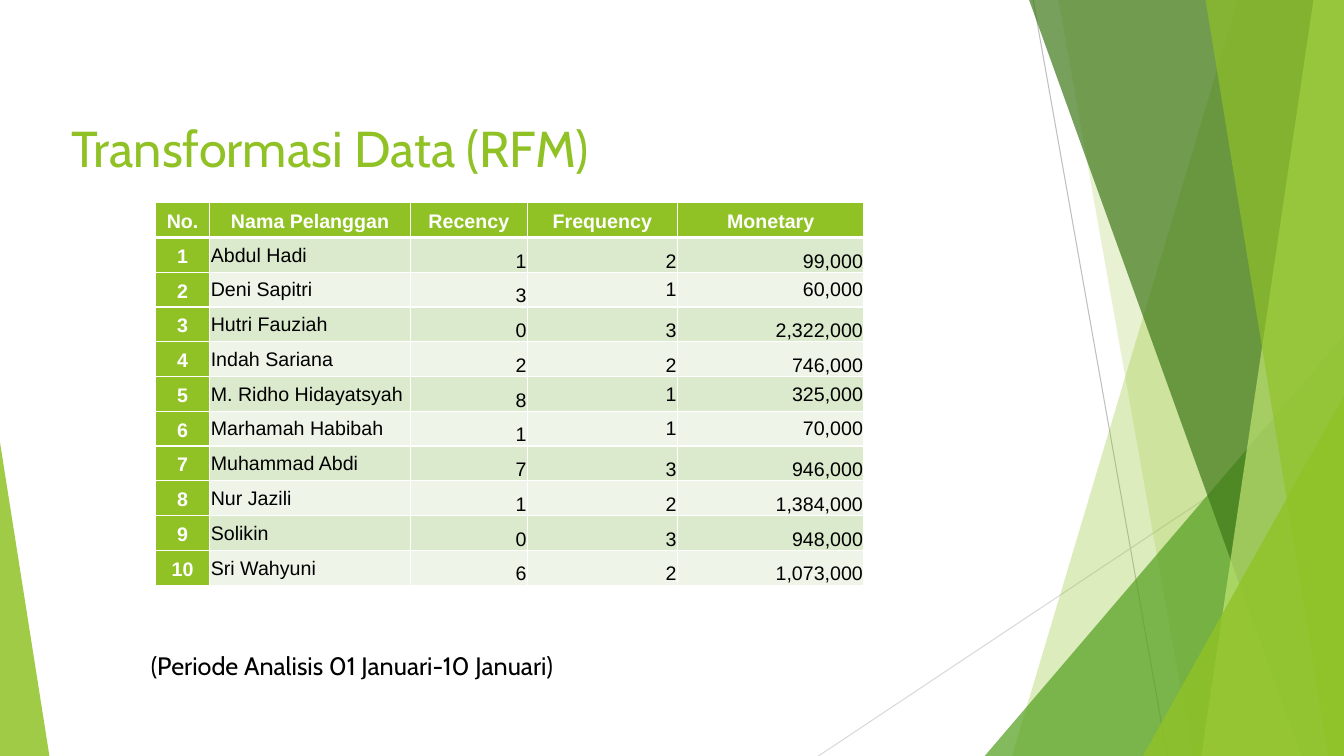
from lxml.etree import SubElement
from pptx import Presentation
from pptx.dml.color import RGBColor
from pptx.enum.shapes import MSO_CONNECTOR, MSO_SHAPE
from pptx.enum.text import MSO_ANCHOR, PP_ALIGN
from pptx.oxml.ns import qn
from pptx.util import Pt

GREEN = "90C226"
WHITE = "FFFFFF"
BLACK = "000000"
HEADINGS = ["No.", "Nama Pelanggan", "Recency", "Frequency", "Monetary"]
COLUMN_WIDTHS = [38.9, 143.3, 83.5, 107.3, 133.2]
CUSTOMERS = [
    ("Abdul Hadi", 1, 2, 99000),
    ("Deni Sapitri", 3, 1, 60000),
    ("Hutri Fauziah", 0, 3, 2322000),
    ("Indah Sariana", 2, 2, 746000),
    ("M. Ridho Hidayatsyah", 8, 1, 325000),
    ("Marhamah Habibah", 1, 1, 70000),
    ("Muhammad Abdi", 7, 3, 946000),
    ("Nur Jazili", 1, 2, 1384000),
    ("Solikin", 0, 3, 948000),
    ("Sri Wahyuni", 6, 2, 1073000),
]


def color(value):
    """Return the colour for a hex string."""
    return RGBColor.from_string(value)


def tint(shape, fill, opacity):
    """Give a shape a translucent fill and neither outline nor shadow."""
    shape.shadow.inherit = False
    shape.line.fill.background()
    shape.fill.solid()
    shape.fill.fore_color.rgb = color(fill)
    tone = next(shape.element.iter(qn("a:srgbClr")))
    SubElement(tone, qn("a:alpha"), val=str(opacity * 1000))


def add_ray(page, start, end, stroke):
    """Draw a thin straight line between two points."""
    ray = page.shapes.add_connector(
        MSO_CONNECTOR.STRAIGHT, *map(Pt, start), *map(Pt, end))
    ray.line.color.rgb = color(stroke)
    ray.line.width = Pt(0.75)
    SubElement(ray.element.spPr, qn("a:effectLst"))


def add_band(page, box, top_x, bottom_x, fill, opacity):
    """Draw a slanted band that reaches to the right edge of the box."""
    left, top, width, height = box
    right, bottom = Pt(left + width), Pt(top + height)
    builder = page.shapes.build_freeform(Pt(left + top_x), Pt(top))
    builder.add_line_segments([
        (right, Pt(top)), (right, bottom), (Pt(left + bottom_x), bottom)])
    tint(builder.convert_to_shape(), fill, opacity)


def add_wedge(page, box, apex, fill, opacity):
    """Draw a triangle filling the box, its apex placed along the top."""
    wedge = page.shapes.add_shape(MSO_SHAPE.ISOSCELES_TRIANGLE, *map(Pt, box))
    wedge.adjustments[0] = apex
    tint(wedge, fill, opacity)


def add_facets(page, box):
    """Draw the overlapping facets on the right of the page."""
    left, top, width, height = box

    def corner_wedge(x, y, fill, opacity):
        """Draw a wedge ending in the lower right corner of the box."""
        add_wedge(page, (left + x, top + y, width - x, height - y),
                  1, fill, opacity)

    add_ray(page, (left + 154, top), (left + 249.8, top + height), "BFBFBF")
    add_ray(page, (left + width, top + 290.2), (left + 0.6, top + height), "D9D9D9")
    add_band(page, box, 300.2, 138.9, GREEN, 30)
    add_band(page, box, 172, 267.8, GREEN, 20)
    corner_wedge(119.4, 239.8, "54A021", 72)
    add_band(page, box, 151.1, 345.5, "3F7819", 70)
    add_band(page, box, 354.2, 274.2, "C0E474", 70)
    add_band(page, box, 277.1, 365, GREEN, 65)
    corner_wedge(232.5, 283, GREEN, 80)


def style_text(paragraph, size, font, text_color, bold=False):
    """Format every run of a paragraph."""
    for span in paragraph.runs:
        span.font.size = Pt(size)
        span.font.name = font
        span.font.bold = bold
        span.font.color.rgb = color(text_color)


def add_text(page, box, text, size, text_color, wrap):
    """Place a single line of text in the box."""
    frame = page.shapes.add_textbox(*map(Pt, box)).text_frame
    frame.word_wrap = wrap
    frame.text = text
    style_text(frame.paragraphs[0], size, "Cabin", text_color)


def add_borders(cell, widths):
    """Give the named sides of a cell white borders."""
    for side, width in widths.items():
        edge = SubElement(cell._tc.get_or_add_tcPr(), qn("a:ln" + side),
                          w=str(Pt(width)))
        SubElement(SubElement(edge, qn("a:solidFill")), qn("a:srgbClr"), val=WHITE)


def fill_cell(cell, text, fill, align, anchor, label):
    """Write one cell, as a bold white label or as plain data."""
    cell.fill.solid()
    cell.fill.fore_color.rgb = color(fill)
    cell.vertical_anchor = anchor
    cell.margin_left = cell.margin_right = Pt(5 if label else 0.7)
    cell.margin_top = Pt(0 if label else 0.7)
    cell.margin_bottom = 0
    cell.text_frame.text = text
    paragraph = cell.text_frame.paragraphs[0]
    paragraph.alignment = align
    if label:
        paragraph.line_spacing = 1.15
    style_text(paragraph, 14, "Arial", WHITE if label else BLACK, label)


def add_customer_table(page, box):
    """Build the table of recency, frequency and monetary values."""
    rows = [HEADINGS] + [
        [str(number), name, str(recency), str(frequency), f"{monetary:,}"]
        for number, (name, recency, frequency, monetary) in enumerate(CUSTOMERS, 1)]
    table = page.shapes.add_table(
        len(rows), len(HEADINGS), *map(Pt, box)).table
    for column, width in zip(table.columns, COLUMN_WIDTHS):
        column.width = Pt(width)
    for row_index, values in enumerate(rows):
        table.rows[row_index].height = Pt(box[3] / len(rows))
        for column_index, text in enumerate(values):
            cell = table.cell(row_index, column_index)
            header = row_index == 0
            label = header or column_index == 0
            fill = GREEN if label else ("EEF4E8", "DBE9CD")[row_index % 2]
            align = PP_ALIGN.CENTER if label else PP_ALIGN.RIGHT
            if column_index == 1 and not header:
                align = PP_ALIGN.LEFT
            single_visit = column_index > 2 and values[3] == "1"
            middle = label or column_index == 1 or single_visit
            anchor = MSO_ANCHOR.MIDDLE if middle else MSO_ANCHOR.BOTTOM
            add_borders(cell, {"L": 1, "R": 1, "T": 3 if row_index == 1 else 1,
                               "B": 3 if header else 1})
            fill_cell(cell, text, fill, align, anchor, label)


def main():
    """Build and save the deck."""
    deck = Presentation()
    deck.slide_width, deck.slide_height = Pt(960), Pt(540)
    page = deck.slides.add_slide(deck.slide_layouts[6])
    add_facets(page, (584, 0, 376, 540))
    add_wedge(page, (0, 316, 35.3, 224), 0, GREEN, 85)
    add_text(page, (44, 80, 566, 104), "Transformasi Data (RFM)", 36, GREEN, True)
    add_customer_table(page, (111, 144.8, sum(COLUMN_WIDTHS), 273.4))
    add_text(page, (100.8, 461, 335.5, 29),
             "(Periode Analisis 01 Januari-10 Januari)", 18, BLACK, False)
    deck.save("out.pptx")


if __name__ == "__main__":
    main()
